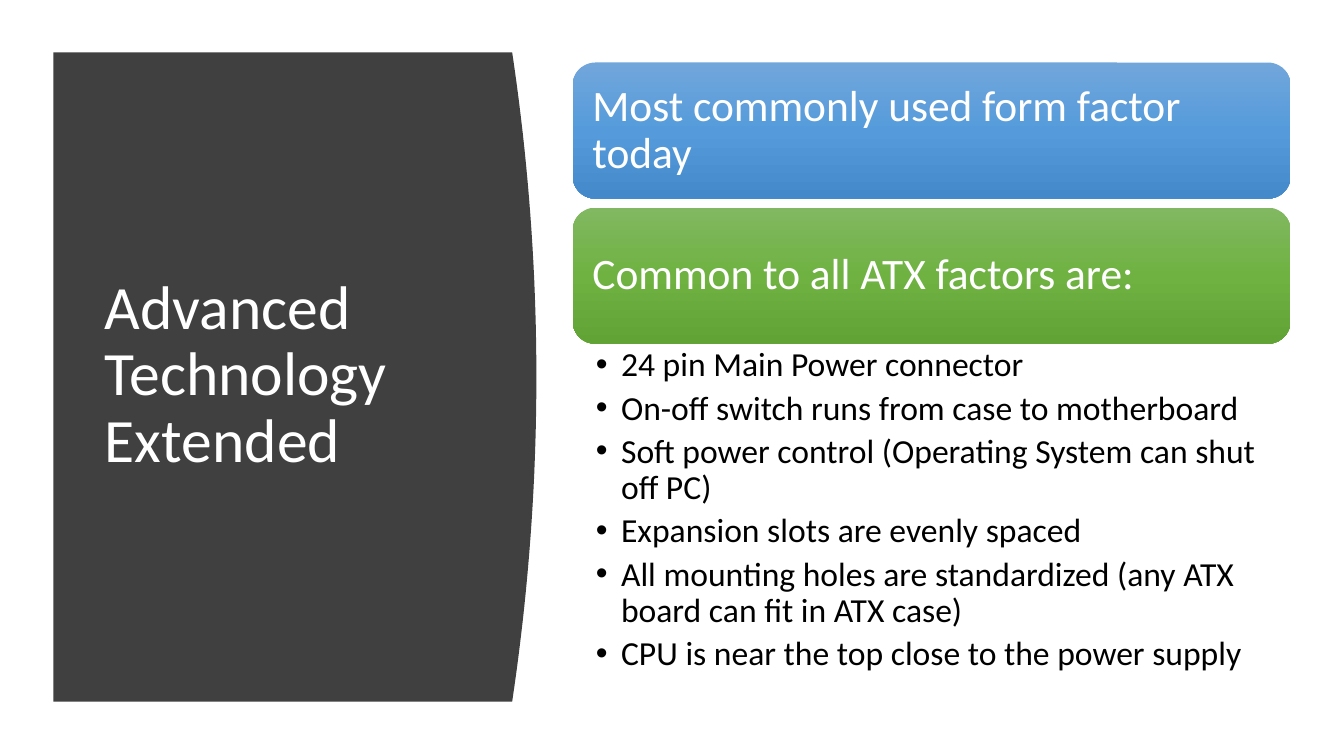
from copy import deepcopy

from lxml.etree import SubElement
from pptx import Presentation
from pptx.dml.color import RGBColor
from pptx.enum.shapes import MSO_SHAPE as Shape
from pptx.enum.text import MSO_ANCHOR as Anchor, MSO_AUTO_SIZE as AutoSize, PP_ALIGN as Align
from pptx.oxml.ns import qn
from pptx.util import Inches, Pt

TITLE = "Advanced Technology Extended"
CARDS = [
    ("Most commonly used form factor today", ("71A6DB", "559BDB", "448ACA")),
    ("Common to all ATX factors are:", ("81B861", "6FB242", "62A336")),
]
FEATURES = [
    "24 pin Main Power connector",
    "On-off switch runs from case to motherboard",
    "Soft power control (Operating System can shut off PC)",
    "Expansion slots are evenly spaced",
    "All mounting holes are standardized (any ATX board can fit in ATX case)",
    "CPU is near the top close to the power supply",
]


def rgb(value):
    return RGBColor.from_string(value)


class Deck:
    font = "Calibri"
    white, black, dark = "FFFFFF", "000000", "404040"

    def __init__(self, width, height):
        self.prs = Presentation()
        self.prs.slide_width, self.prs.slide_height = Inches(width), Inches(height)
        self.s = self.prs.slides.add_slide(self.prs.slide_layouts[5])

    def set_text(self, sp, lines, size, color, insets, anchor, after=0):
        tf = sp.text_frame
        left, top, right, bottom = map(Inches, insets)
        frame_format = {
            "word_wrap": True, "auto_size": AutoSize.NONE, "vertical_anchor": anchor,
            "margin_left": left, "margin_top": top,
            "margin_right": right, "margin_bottom": bottom,
        }
        for name, value in frame_format.items():
            setattr(tf, name, value)
        for i, line in enumerate(lines):
            p = tf.paragraphs[0] if i == 0 else tf.add_paragraph()
            para_format = {"alignment": Align.LEFT, "line_spacing": 0.9,
                           "space_before": Pt(0), "space_after": Pt(after)}
            for name, value in para_format.items():
                setattr(p, name, value)
            r = p.add_run()
            r.text = line
            for name, value in {"name": self.font, "size": Pt(size)}.items():
                setattr(r.font, name, value)
            r.font.color.rgb = rgb(color)
        return tf

    def title(self, text, box):
        sp = self.s.shapes.title
        sp.left, sp.top, sp.width, sp.height = map(Inches, box)
        self.set_text(sp, [text], 44, self.white, (0.1, 0.05, 0.1, 0.05), Anchor.MIDDLE)

    def curved_panel(self, left, top, edge, bottom, bulge, steps=40):
        """Panel whose right side is a shallow parabola."""
        middle, half = (top + bottom) / 2, (bottom - top) / 2
        heights = [top + (bottom - top) * i / steps for i in range(steps + 1)]
        curve = [(edge + bulge * (1 - ((y - middle) / half) ** 2), y) for y in heights]
        builder = self.s.shapes.build_freeform(Inches(left), Inches(top))
        points = [(Inches(x), Inches(y)) for x, y in curve + [(left, bottom)]]
        builder.add_line_segments(points, close=True)
        sp = builder.convert_to_shape()
        sp.shadow.inherit = False
        sp.fill.solid()
        sp.fill.fore_color.rgb = rgb(self.dark)
        sp.line.fill.background()
        # Behind the title
        self.s.shapes._spTree.insert(2, sp._element)

    def card(self, text, colors, box):
        sp = self.s.shapes.add_shape(Shape.ROUNDED_RECTANGLE, *map(Inches, box))
        sp.shadow.inherit = False
        sp.line.fill.background()
        sp.fill.gradient()
        sp.fill.gradient_angle = 270
        # The default gradient has two stops; a third goes between them
        stops = sp._element.spPr.find(qn("a:gradFill")).find(qn("a:gsLst"))
        stops.insert(1, deepcopy(stops[0]))
        for stop, color, position in zip(sp.fill.gradient_stops, colors, (0, 0.5, 1)):
            stop.color.rgb = rgb(color)
            stop.position = position
        self.set_text(sp, [text], 31, self.white, (0.13,) * 4, Anchor.MIDDLE)

    def bullets(self, lines, box):
        sp = self.s.shapes.add_textbox(*map(Inches, box))
        tf = self.set_text(sp, lines, 24, self.black, (0.23, 0.04, 0.24, 0.04), Anchor.TOP, 5)
        for p in tf.paragraphs:
            pPr = p._p.get_or_add_pPr()
            pPr.set("marL", str(Inches(0.25)))
            pPr.set("indent", str(-Inches(0.25)))
            SubElement(pPr, qn("a:buFont"), typeface="Arial")
            SubElement(pPr, qn("a:buChar"), char="•")


def main():
    deck = Deck(13.33, 7.5)

    # Title on the dark panel
    deck.curved_panel(left=0.53, top=0.52, edge=5.08, bottom=6.96, bulge=0.24)
    deck.title(TITLE, (0.94, 1.11, 3.74, 5.24))

    # Cards with the feature list below
    left, top, width, height, pitch = 5.68, 0.62, 7.12, 1.35, 1.44
    for i, (text, colors) in enumerate(CARDS):
        deck.card(text, colors, (left, top + i * pitch, width, height))
    deck.bullets(FEATURES, (left, top + pitch + height, width, 3.44))

    deck.prs.save("out.pptx")


if __name__ == "__main__":
    main()
